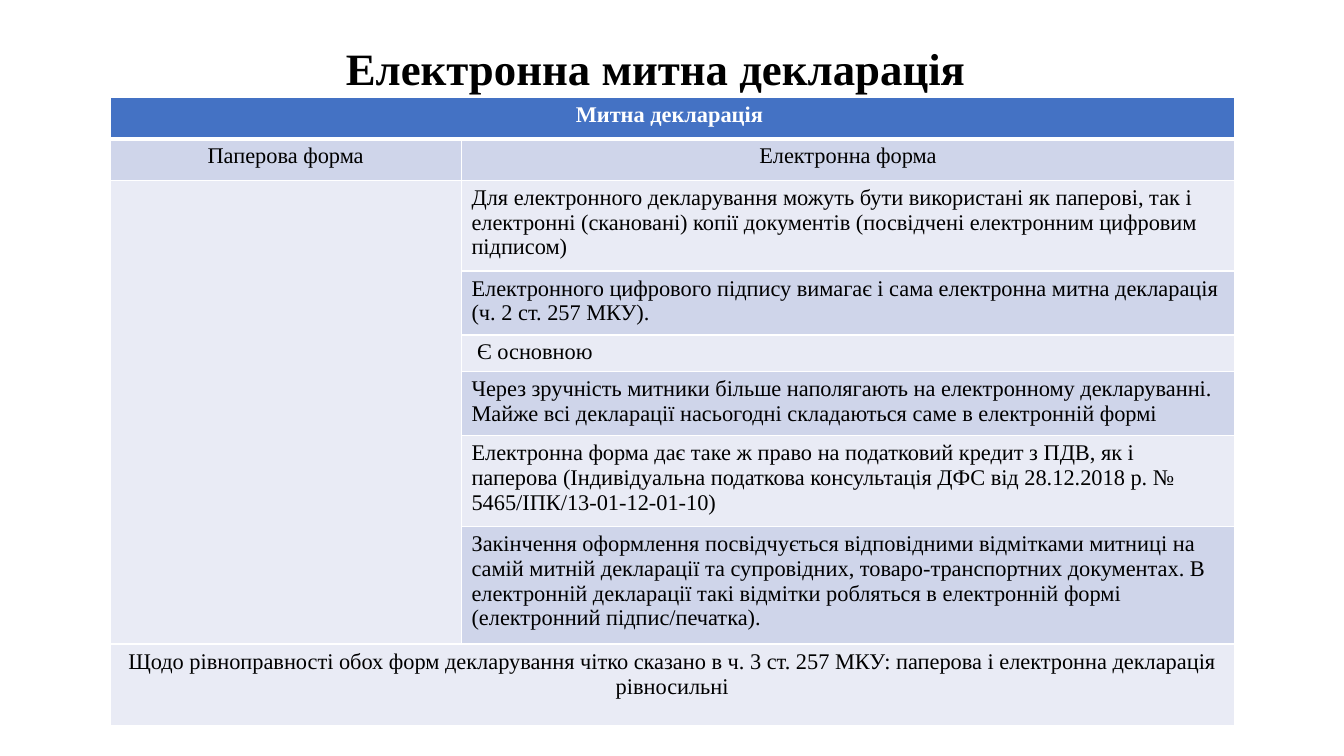
"""Builds a slide comparing paper and electronic customs declarations."""
from lxml.etree import SubElement
from pptx import Presentation
from pptx.dml.color import RGBColor
from pptx.enum.text import MSO_ANCHOR, MSO_AUTO_SIZE, PP_ALIGN
from pptx.oxml.ns import qn
from pptx.util import Cm, Pt

TITLE = "Електронна митна декларація"
HEADER = "Митна декларація "
FORMS = ("Паперова форма", "Електронна форма")
ELECTRONIC = [
    "Для електронного декларування можуть бути використані як паперові, так і електронні "
    "(скановані) копії документів (посвідчені електронним цифровим підписом)",
    "Електронного цифрового підпису вимагає і сама електронна митна декларація "
    "(ч. 2 ст. 257 МКУ).",
    " Є основною",
    "Через зручність митники більше наполягають на електронному декларуванні. "
    "Майже всі декларації насьогодні складаються саме в електронній формі",
    "Електронна форма дає таке ж право на податковий кредит з ПДВ, як і паперова "
    "(Індивідуальна податкова консультація ДФС від 28.12.2018 р. № 5465/ІПК/13-01-12-01-10)",
    "Закінчення оформлення посвідчується відповідними відмітками митниці на самій митній "
    "декларації та супровідних, товаро-транспортних документах. В електронній декларації "
    "такі відмітки робляться в електронній формі (електронний підпис/печатка).",
]
CONCLUSION = (
    "Щодо рівноправності обох форм декларування чітко сказано в ч. 3 ст. 257 МКУ: "
    "паперова і електронна декларація рівносильні"
)
ROWS = [(HEADER, ""), FORMS, *(("", text) for text in ELECTRONIC), (CONCLUSION, "")]
LAST = len(ROWS) - 1
COLUMN_WIDTHS = (8.86, 19.48)
ROW_HEIGHTS = (1.04, 1.04, 2.29, 1.61, 0.93, 1.6, 2.29, 2.97, 2.06)
MERGES = [((0, 0), (0, 1)), ((2, 0), (LAST - 1, 0)), ((LAST, 0), (LAST, 1))]
CENTRED_ROWS = (0, 1, LAST)
FONT = "Times New Roman"
COLORS = {"header": "4472C4", "dark": "CFD5EA", "light": "E9EBF5",
          "white": "FFFFFF", "text": "000000"}


def rgb(name):
    return RGBColor.from_string(COLORS[name])


def style_font(font, size, color, bold):
    font.name, font.size, font.bold = FONT, Pt(size), bold
    font.color.rgb = rgb(color)


def add_borders(cell, row):
    properties = cell._tc.get_or_add_tcPr()
    for side in "LRTB":
        thick = (row, side) in ((0, "B"), (1, "T"))
        line = SubElement(properties, qn(f"a:ln{side}"), w=str(Pt(3 if thick else 1)))
        fill = SubElement(line, qn("a:solidFill"))
        SubElement(fill, qn("a:srgbClr"), val=COLORS["white"])


def add_title(slide):
    title = slide.shapes.title
    title.left, title.top, title.width, title.height = Cm(8.46), Cm(0.81), Cm(16.94), Cm(1.65)
    frame = title.text_frame
    frame.text = TITLE
    frame.auto_size = MSO_AUTO_SIZE.NONE
    frame.vertical_anchor = MSO_ANCHOR.TOP
    para = frame.paragraphs[0]
    para.alignment = PP_ALIGN.LEFT
    para.line_spacing = 1.07
    para.space_after = Pt(8)
    style_font(para.font, 32, "text", True)


def add_comparison(slide):
    table = slide.shapes.add_table(
        len(ROWS), len(COLUMN_WIDTHS), Cm(2.77), Cm(2.46),
        Cm(sum(COLUMN_WIDTHS)), Cm(sum(ROW_HEIGHTS))).table
    for column, width in zip(table.columns, COLUMN_WIDTHS):
        column.width = Cm(width)
    for row, (texts, height) in enumerate(zip(ROWS, ROW_HEIGHTS)):
        table.rows[row].height = Cm(height)
        band = "header" if row == 0 else "dark" if row % 2 else "light"
        for column, text in enumerate(texts):
            cell = table.cell(row, column)
            add_borders(cell, row)
            cell.fill.solid()
            cell.fill.fore_color.rgb = rgb(band)
            cell.text = text
            para = cell.text_frame.paragraphs[0]
            para.alignment = PP_ALIGN.CENTER if row in CENTRED_ROWS else PP_ALIGN.LEFT
            style_font(para.font, 16, "white" if row == 0 else "text", row == 0)
    for first, last in MERGES:
        table.cell(*first).merge(table.cell(*last))


def main():
    deck = Presentation()
    deck.slide_width, deck.slide_height = Cm(33.87), Cm(19.05)
    slide = deck.slides.add_slide(deck.slide_layouts[5])
    add_title(slide)
    add_comparison(slide)
    deck.save("out.pptx")


if __name__ == "__main__":
    main()
